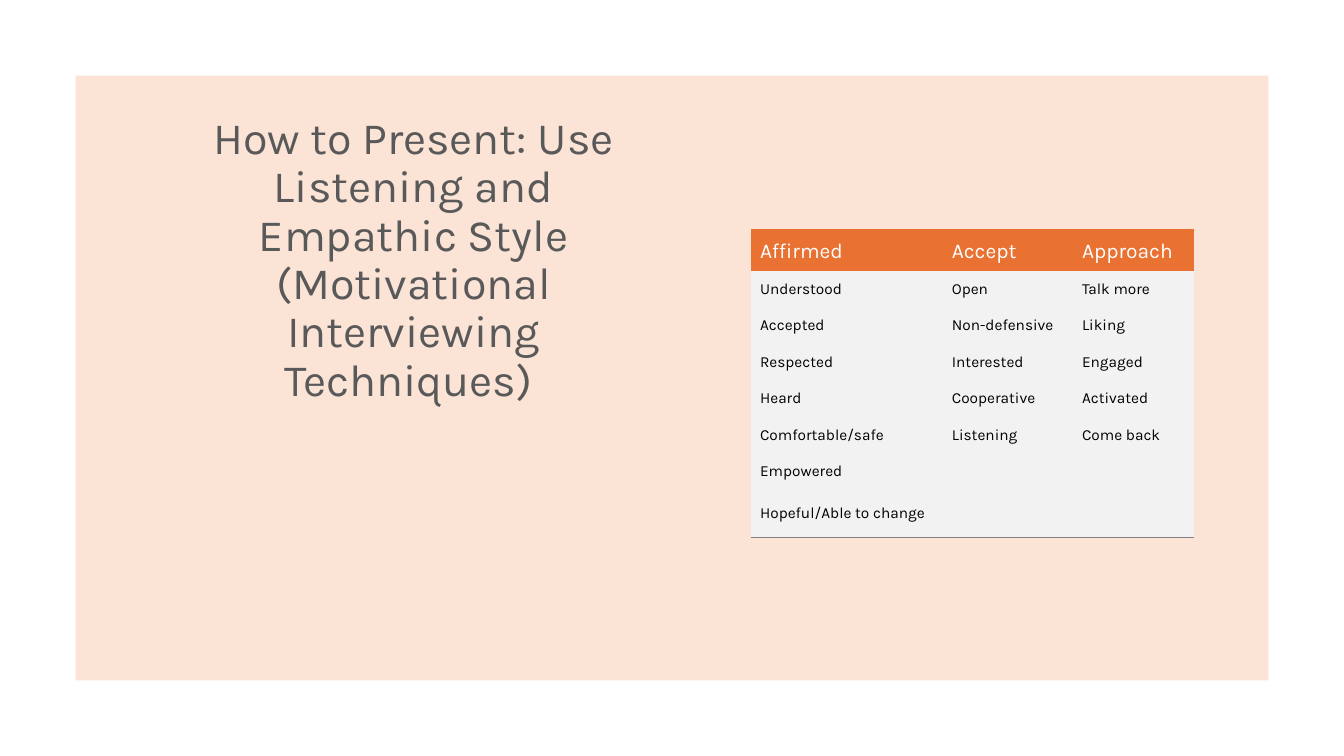
from dataclasses import dataclass

from lxml import etree
from pptx import Presentation
from pptx.dml.color import RGBColor
from pptx.enum.shapes import MSO_SHAPE
from pptx.enum.text import MSO_ANCHOR, MSO_AUTO_SIZE, PP_ALIGN
from pptx.oxml.ns import qn
from pptx.util import Pt

RECT = MSO_SHAPE.RECTANGLE
TOP, MIDDLE, BOTTOM = MSO_ANCHOR.TOP, MSO_ANCHOR.MIDDLE, MSO_ANCHOR.BOTTOM
LEFT, CENTER = PP_ALIGN.LEFT, PP_ALIGN.CENTER
NO_FIT = MSO_AUTO_SIZE.NONE


@dataclass(frozen=True)
class Theme:
    font: str = "Karla"
    panel: str = "FBE3D6"
    title: str = "595959"
    header: str = "E97132"
    header_text: str = "FFFFFF"
    body: str = "F2F2F2"
    body_text: str = "000000"
    rule: str = "808080"
    title_size: float = 32
    header_size: float = 15
    body_size: float = 11
    rule_width: float = 0.75


def write(tf, text, *, font, size, color, align=LEFT, spacing=1.0):
    """Put one formatted paragraph into a text frame."""
    p = tf.paragraphs[0]
    p.alignment, p.line_spacing = align, spacing
    r = p.add_run()
    r.text = text
    r.font.name, r.font.size, r.font.bold = font, Pt(size), False
    r.font.color.rgb = RGBColor.from_string(color)


class SlideBuilder:
    def __init__(self, slide, theme):
        self.slide, self.theme = slide, theme

    def panel(self, x, y, w, h):
        sp = self.slide.shapes.add_shape(RECT, Pt(x), Pt(y), Pt(w), Pt(h))
        sp.shadow.inherit = False
        sp.fill.solid()
        sp.fill.fore_color.rgb = RGBColor.from_string(self.theme.panel)
        sp.line.fill.background()
        # Keep the panel behind the title placeholder
        self.slide.shapes.title._element.addprevious(sp._element)

    def title(self, text, x, y, w, h):
        t = self.theme
        sp = self.slide.shapes.title
        sp.left, sp.top, sp.width, sp.height = Pt(x), Pt(y), Pt(w), Pt(h)
        tf = sp.text_frame
        tf.word_wrap, tf.auto_size, tf.vertical_anchor = True, NO_FIT, BOTTOM
        write(tf, text, font=t.font, size=t.title_size, color=t.title,
              align=CENTER, spacing=0.9)

    def borders(self, cell, ruled):
        """Draw only the bottom edge, and only on ruled cells."""
        tc_pr = cell._tc.get_or_add_tcPr()
        for i, side in enumerate(("lnL", "lnR", "lnT", "lnB")):
            drawn = ruled and side == "lnB"
            ln = etree.Element(qn(f"a:{side}"))
            if drawn:
                ln.set("w", str(Pt(self.theme.rule_width)))
                fill = etree.SubElement(ln, qn("a:solidFill"))
                etree.SubElement(fill, qn("a:srgbClr"), val=self.theme.rule)
            else:
                etree.SubElement(ln, qn("a:noFill"))
            tc_pr.insert(i, ln)

    def cell(self, cell, text, is_header):
        t = self.theme
        cell.fill.solid()
        cell.fill.fore_color.rgb = RGBColor.from_string(
            t.header if is_header else t.body)
        cell.margin_left = cell.margin_right = cell.margin_top = Pt(6.5)
        cell.margin_bottom = Pt(3.5)
        cell.vertical_anchor = MIDDLE if is_header else TOP
        write(cell.text_frame, text, font=t.font,
              size=t.header_size if is_header else t.body_size,
              color=t.header_text if is_header else t.body_text)
        self.borders(cell, ruled=not is_header)

    def table(self, rows, x, y, widths, header_h, row_h):
        heights = [header_h] + [row_h] * (len(rows) - 1)
        table = self.slide.shapes.add_table(
            len(rows), len(widths), Pt(x), Pt(y),
            Pt(sum(widths)), Pt(sum(heights))).table
        table.first_row = table.horz_banding = False
        for column, width in zip(table.columns, widths):
            column.width = Pt(width)
        for i, (row, height) in enumerate(zip(rows, heights)):
            table.rows[i].height = Pt(height)
            for j, text in enumerate(row):
                self.cell(table.cell(i, j), text, is_header=i == 0)


ROWS = [
    ("Affirmed", "Accept", "Approach"),
    ("Understood", "Open", "Talk more"),
    ("Accepted", "Non-defensive", "Liking"),
    ("Respected", "Interested", "Engaged"),
    ("Heard", "Cooperative", "Activated"),
    ("Comfortable/safe", "Listening", "Come back"),
    ("Empowered", "", ""),
    ("Hopeful/Able to change", "", ""),
]


def main():
    prs = Presentation()
    prs.slide_width, prs.slide_height = Pt(960), Pt(540)
    s = prs.slides.add_slide(prs.slide_layouts[5])
    builder = SlideBuilder(s, Theme())

    # Background panel
    builder.panel(54, 54, 852, 432)

    # Title
    builder.title("How to Present: Use Listening and Empathic Style "
                  "(Motivational Interviewing Techniques) ",
                  116, 108.7, 359, 185)

    # Table of responses
    builder.table(ROWS, 536.4, 163.5, (137, 93, 86.3),
                  header_h=30, row_h=26.1)

    prs.save("out.pptx")


if __name__ == "__main__":
    main()
